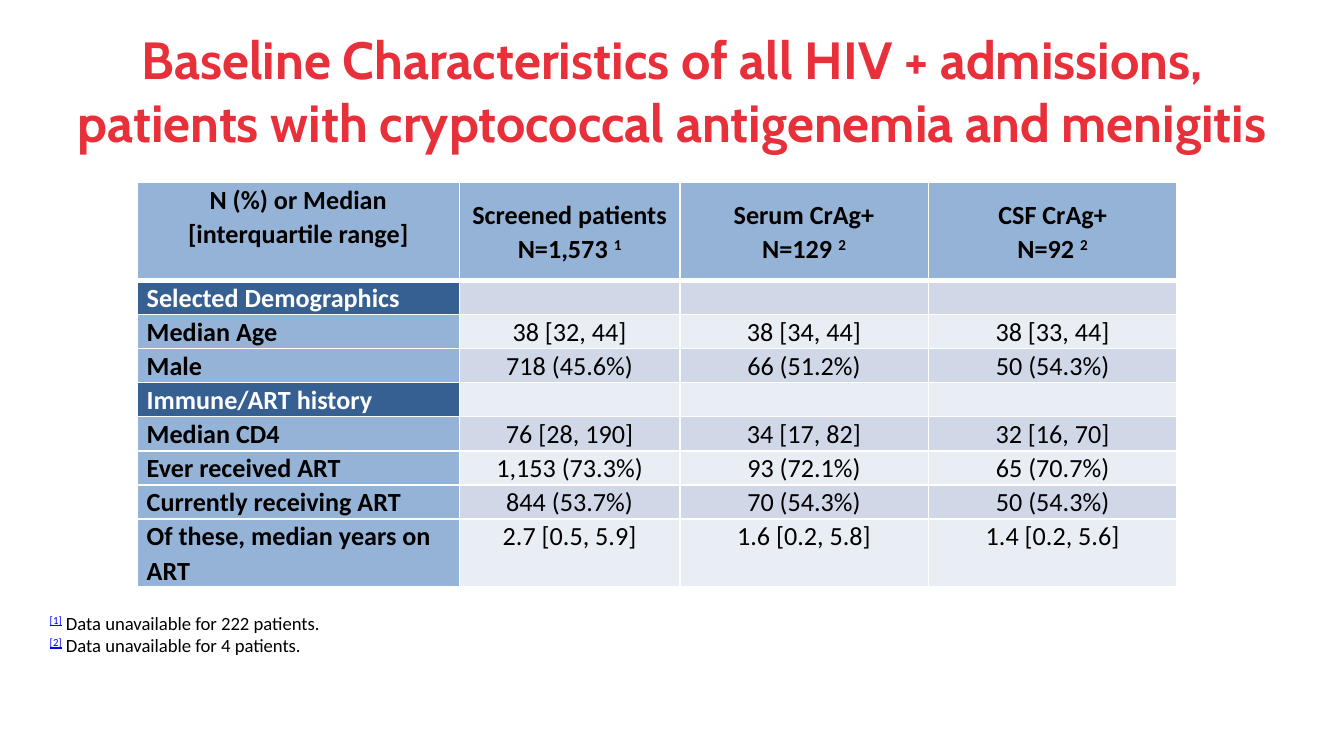
from lxml import etree
from pptx import Presentation
from pptx.dml.color import RGBColor
from pptx.enum.text import MSO_ANCHOR, MSO_AUTO_SIZE, PP_ALIGN
from pptx.oxml.ns import qn
from pptx.util import Pt

LEFT, CENTER = PP_ALIGN.LEFT, PP_ALIGN.CENTER
TOP, MIDDLE = MSO_ANCHOR.TOP, MSO_ANCHOR.MIDDLE
NO_AUTOFIT = MSO_AUTO_SIZE.NONE

THEME = {
    "title_font": "Cabin", "body_font": "Calibri",
    "title_size": 28, "table_size": 14, "note_size": 10,
    "title": "E8303B", "text": "000000", "white": "FFFFFF", "link": "0000FF",
    "label": "95B3D7", "section": "376092", "bands": ("D0D8E8", "E9EDF4"),
}

TITLE = ("Baseline Characteristics of all HIV + admissions, "
         "patients with cryptococcal antigenemia and menigitis")
CORNER = "N (%) or Median [interquartile range]"
GROUPS = [  # name, count, footnote
    ("Screened patients", "N=1,573 ", "1"),
    ("Serum CrAg+", "N=129 ", "2"),
    ("CSF CrAg+", "N=92 ", "2"),
]
ROWS = [  # a row without values is a section heading
    ("Selected Demographics",),
    ("Median Age", "38 [32, 44]", "38 [34, 44]", "38 [33, 44]"),
    ("Male", "718 (45.6%)", "66 (51.2%)", "50 (54.3%)"),
    ("Immune/ART history",),
    ("Median CD4", "76 [28, 190]", "34 [17, 82]", "32 [16, 70]"),
    ("Ever received ART", "1,153 (73.3%)", "93 (72.1%)", "65 (70.7%)"),
    ("Currently receiving ART", "844 (53.7%)", "70 (54.3%)", "50 (54.3%)"),
    ("Of these, median years on ART", "2.7 [0.5, 5.9]", "1.6 [0.2, 5.8]", "1.4 [0.2, 5.6]"),
]
NOTES = [
    ("[1]", " Data unavailable for 222 patients."),
    ("[2]", " Data unavailable for 4 patients."),
]

COL_WIDTHS = (172.8, 118, 133.2, 133.2)
HEADER_H, ROW_H, LAST_ROW_H = 52.5, 17.5, 33
INSET = 5.2


def add_run(p, text, size, color="text", font="body_font", bold=False, raised=False):
    r = p.add_run()
    r.text = text
    r.font.name = THEME[font]
    r.font.size = Pt(size)
    r.font.bold = bold
    r.font.color.rgb = RGBColor.from_string(THEME[color])
    if raised:
        r._r.get_or_add_rPr().set("baseline", "30000")
    return r


def set_borders(cell, bottom):
    """Draw white cell borders, 1 pt except for the bottom one."""
    tcPr = cell._tc.get_or_add_tcPr()
    for i, (side, width) in enumerate((("L", 1), ("R", 1), ("T", 1), ("B", bottom))):
        ln = etree.Element(qn(f"a:ln{side}"), w=str(Pt(width)))
        fill = etree.SubElement(ln, qn("a:solidFill"))
        etree.SubElement(fill, qn("a:srgbClr"), val=THEME["white"])
        tcPr.insert(i, ln)


def format_cell(cell, fill, align=CENTER, anchor=TOP, bottom=1):
    """Style a cell and return its paragraph."""
    cell.fill.solid()
    cell.fill.fore_color.rgb = RGBColor.from_string(fill)
    cell.margin_left = cell.margin_right = Pt(INSET)
    cell.margin_top = cell.margin_bottom = 0
    cell.vertical_anchor = anchor
    set_borders(cell, bottom)
    p = cell.text_frame.paragraphs[0]
    p.alignment = align
    p.line_spacing = 1.07
    return p


def add_title(s):
    sp = s.shapes.title
    sp.left, sp.top, sp.width, sp.height = Pt(36), Pt(14.4), Pt(648), Pt(67.7)
    tf = sp.text_frame
    tf.word_wrap = True
    tf.auto_size = NO_AUTOFIT
    tf.vertical_anchor = MIDDLE
    tf.margin_left = tf.margin_right = Pt(5)
    tf.margin_top = tf.margin_bottom = Pt(2.5)
    p = tf.paragraphs[0]
    p.alignment = CENTER
    add_run(p, TITLE, THEME["title_size"], "title", "title_font", bold=True)


def add_characteristics(s):
    size = THEME["table_size"]
    heights = [HEADER_H] + [ROW_H] * (len(ROWS) - 1) + [LAST_ROW_H]
    table = s.shapes.add_table(len(heights), len(COL_WIDTHS), Pt(73.4), Pt(97.7),
                               Pt(sum(COL_WIDTHS)), Pt(sum(heights))).table
    for col, width in zip(table.columns, COL_WIDTHS):
        col.width = Pt(width)
    for row, height in zip(table.rows, heights):
        row.height = Pt(height)

    p = format_cell(table.cell(0, 0), THEME["label"], bottom=3)
    add_run(p, CORNER, size, bold=True)
    for c, (name, count, note) in enumerate(GROUPS, 1):
        p = format_cell(table.cell(0, c), THEME["label"], anchor=MIDDLE, bottom=3)
        add_run(p, name, size, bold=True)
        p.add_line_break()
        add_run(p, count, size, bold=True)
        add_run(p, note, size, bold=True, raised=True)

    for i, (label, *values) in enumerate(ROWS):
        kind, color = ("label", "text") if values else ("section", "white")
        p = format_cell(table.cell(i + 1, 0), THEME[kind], LEFT)
        add_run(p, label, size, color, bold=True)
        for c in range(1, len(COL_WIDTHS)):
            p = format_cell(table.cell(i + 1, c), THEME["bands"][i % 2])
            if values:
                add_run(p, values[c - 1], size)
            else:  # keeps the empty row from growing to the default text size
                etree.SubElement(p._p, qn("a:endParaRPr"), sz=str(size * 100))


def add_notes(s):
    tf = s.shapes.add_textbox(Pt(19.6), Pt(324), Pt(162.7), Pt(53)).text_frame
    tf.word_wrap = False
    tf.vertical_anchor = TOP
    for i, (mark, text) in enumerate(NOTES):
        p = tf.add_paragraph() if i else tf.paragraphs[0]
        p.alignment = LEFT
        r = add_run(p, mark, THEME["note_size"], "link", raised=True)
        r.font.underline = True
        add_run(p, text, THEME["note_size"])


def main():
    prs = Presentation()
    prs.slide_width, prs.slide_height = Pt(720), Pt(405)
    s = prs.slides.add_slide(prs.slide_layouts[5])
    add_title(s)
    add_characteristics(s)
    add_notes(s)
    prs.save("out.pptx")


if __name__ == "__main__":
    main()
